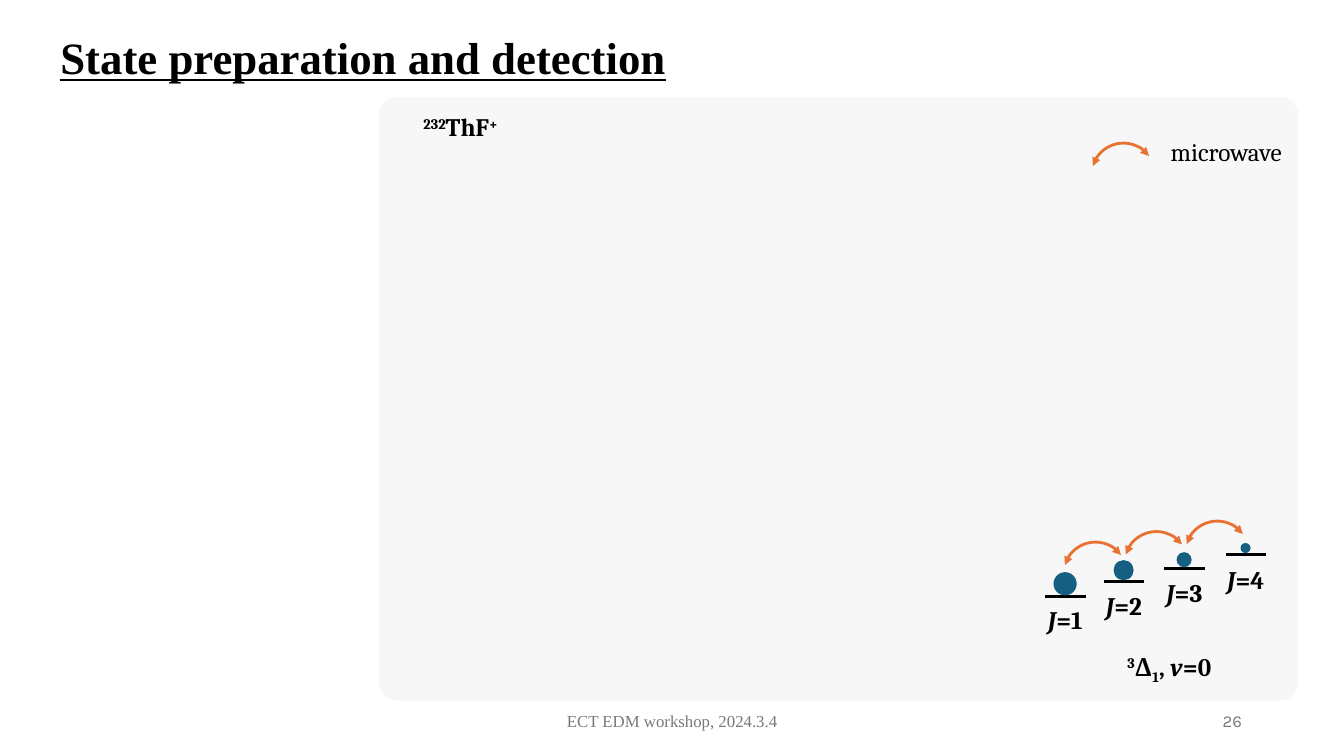
from lxml import etree
from pptx import Presentation
from pptx.dml.color import RGBColor
from pptx.enum import shapes, text
from pptx.oxml.ns import qn
from pptx.util import Pt

COLORS = {"black": "000000", "gray": "797979", "panel": "D9D9D9",
          "ball": "156082", "microwave": "E97132"}

deck = Presentation()
deck.slide_width, deck.slide_height = Pt(960), Pt(540)
page = deck.slides.add_slide(deck.slide_layouts[6])


def add_text(runs, left, top, width, height=28.8, font="Cambria", size=18, color="black",
             bold=False, underline=False, align="CENTER", footer=False, wrap=True):
    """Add a text box; runs are (text, italic, baseline) tuples."""
    box = page.shapes.add_textbox(Pt(left), Pt(top), Pt(width), Pt(height))
    frame = box.text_frame
    frame.word_wrap = wrap
    if footer:
        frame.vertical_anchor = text.MSO_ANCHOR.MIDDLE
    else:
        frame.auto_size = text.MSO_AUTO_SIZE.SHAPE_TO_FIT_TEXT
    para = frame.paragraphs[0]
    para.alignment = text.PP_ALIGN[align]
    for words, italic, baseline in runs:
        span = para.add_run()
        span.text = words
        span.font.name = font
        span.font.size = Pt(size)
        span.font.bold = bold
        span.font.italic = italic
        span.font.underline = underline
        span.font.color.rgb = RGBColor.from_string(COLORS[color])
        if baseline:
            span.font._element.set("baseline", str(baseline * 1000))


def add_shape(kind, left, top, width, height, fill=None):
    shape = page.shapes.add_shape(kind, Pt(left), Pt(top), Pt(width), Pt(height))
    shape.shadow.inherit = False
    if fill:
        shape.fill.solid()
        shape.fill.fore_color.rgb = RGBColor.from_string(COLORS[fill])
        shape.line.fill.background()
    else:
        shape.fill.background()
    return shape


# Panel
panel = add_shape(shapes.MSO_SHAPE.ROUNDED_RECTANGLE, 270.7, 69.1, 656.6, 431.3, "panel")
panel.adjustments[0] = 0.03
panel_color = panel.fill._xPr.find(qn("a:solidFill"))[0]
etree.SubElement(panel_color, qn("a:alpha"), val="20000")

# Rotational levels with their populations
levels = [(746.6, 426.2, 16.6), (788.4, 415.4, 14.4), (831.6, 406.1, 10.8), (875.5, 396, 7.2)]
for index, (left, top, diameter) in enumerate(levels):
    level = page.shapes.add_connector(shapes.MSO_CONNECTOR.STRAIGHT,
                                      Pt(left), Pt(top), Pt(left + 28.8), Pt(top))
    level.line.width = Pt(2)
    level.line.color.rgb = RGBColor.from_string(COLORS["black"])
    etree.SubElement(level._element.spPr, qn("a:effectLst"))
    add_text([("J", True, 0), (f"={index + 1}", False, 0)],
             left - 6.5, 428 - 9.6 * index, 41.8, bold=True)
    add_shape(shapes.MSO_SHAPE.OVAL, left + 14.2 - diameter / 2, top - 0.9 - diameter,
              diameter, diameter, "ball")

# Microwave transitions, then the legend arc
arcs = [(759.8 + 43.5 * step, 387.2 - 7.5 * step) for step in range(3)] + [(779.8, 102.2)]
for left, top in arcs:
    arc = add_shape(shapes.MSO_SHAPE.ARC, left, top, 45.4, 45.4)
    arc.rotation = 323.6
    arc.adjustments[0], arc.adjustments[1] = 139.516, 0
    arc.line.width = Pt(2)
    arc.line.color.rgb = RGBColor.from_string(COLORS["microwave"])
    for end in ("a:headEnd", "a:tailEnd"):
        etree.SubElement(arc.line._get_or_add_ln(), qn(end), type="triangle")

# Labels
add_text([("3", False, 30), ("Δ", False, 0), ("1", False, -25), (", ", False, 0),
          ("v", True, 0), ("=0", False, 0)], 794.9, 461.5, 80.6, bold=True)
add_text([("232", False, 30), ("ThF", False, 0), ("+", False, 30)],
         290.9, 76.3, 76.3, bold=True)
add_text([("microwave", False, 0)], 821.5, 93.6, 108.7)

# Title and footer
add_text([("State preparation and detection", False, 0)], 36, 18, 450.7, 46.1,
         font="Times New Roman", size=32, bold=True, underline=True, align="LEFT", wrap=False)
add_text([("ECT EDM workshop, 2024.3.4", False, 0)], 318.2, 500.4, 324,
         font="Times New Roman", size=12, color="gray", footer=True)
add_text([("26", False, 0)], 678.2, 500.4, 216,
         font="Karla", size=12, color="gray", align="RIGHT", footer=True)

deck.save("out.pptx")
